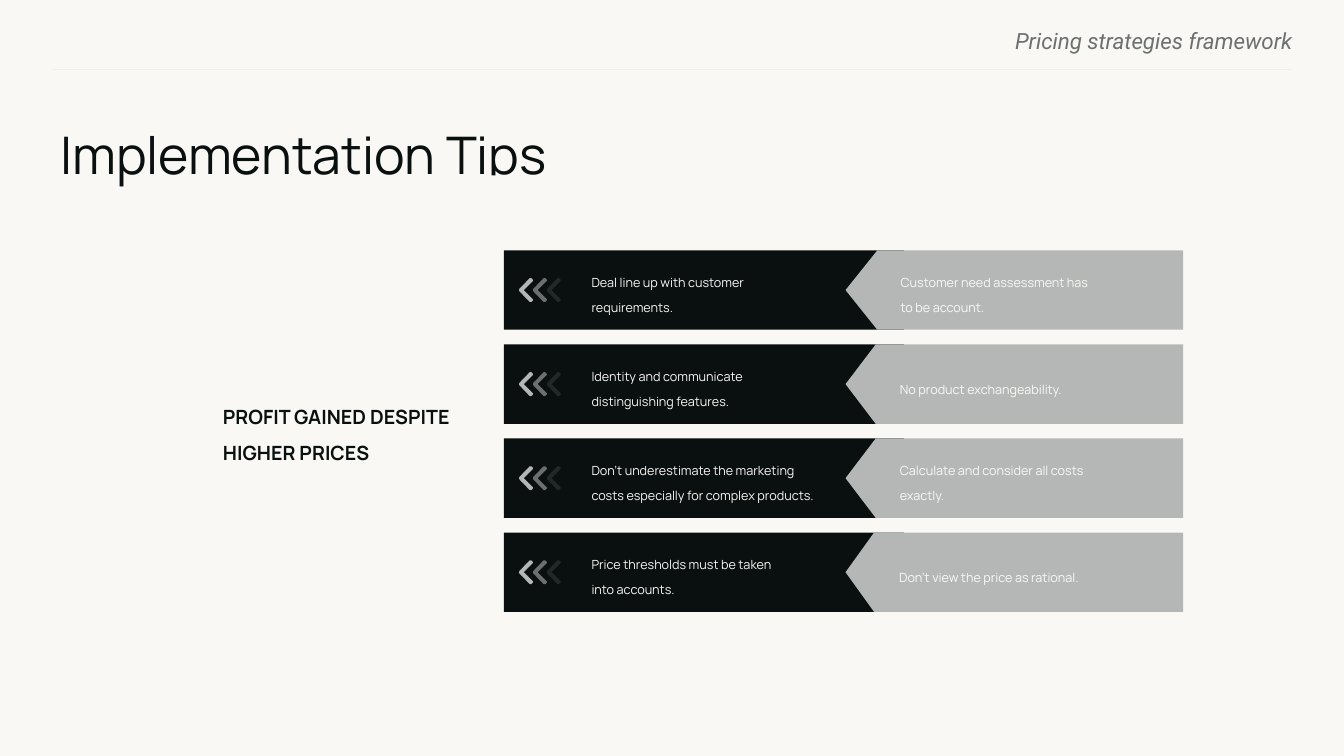
from lxml import etree
from pptx import Presentation
from pptx.dml.color import RGBColor
from pptx.enum.shapes import MSO_CONNECTOR, MSO_SHAPE
from pptx.enum.text import MSO_ANCHOR, PP_ALIGN
from pptx.oxml.ns import qn
from pptx.util import Cm, Pt

STRAIGHT = MSO_CONNECTOR.STRAIGHT
RECTANGLE, PENTAGON = MSO_SHAPE.RECTANGLE, MSO_SHAPE.PENTAGON
TOP, MIDDLE = MSO_ANCHOR.TOP, MSO_ANCHOR.MIDDLE
LEFT, RIGHT = PP_ALIGN.LEFT, PP_ALIGN.RIGHT

PAPER, INK, SILVER = "F9F8F5", "09100F", "B5B7B7"
WHITE, GREY, RULE = "FFFFFF", "6C706F", "EFEFEF"


def paint(shape, color):
    """Give a shape a plain fill with no outline and no shadow."""
    shape.shadow.inherit = False
    shape.fill.solid()
    shape.fill.fore_color.rgb = RGBColor.from_string(color)
    shape.line.fill.background()


def write(shape, paragraphs, color, font, paragraph=None, insets=(0, 0), anchor=MIDDLE):
    """Fill a shape with paragraphs; font and paragraph hold format values."""
    frame = shape.text_frame
    frame.word_wrap = True
    frame.vertical_anchor = anchor
    frame.margin_left, frame.margin_right = (Cm(inset) for inset in insets)
    frame.margin_top = frame.margin_bottom = 0
    frame.text = "\n".join(paragraphs)
    for para in frame.paragraphs:
        for name, value in {"alignment": LEFT, **(paragraph or {})}.items():
            setattr(para, name, value)
        for span in para.runs:
            span.font.color.rgb = RGBColor.from_string(color)
            for name, value in font.items():
                setattr(span.font, name, value)


deck = Presentation()
deck.slide_width, deck.slide_height = Cm(33.87), Cm(19.05)
page = deck.slides.add_slide(deck.slide_layouts[6])
page.background.fill.solid()
page.background.fill.fore_color.rgb = RGBColor.from_string(PAPER)

# Header and title
header = page.shapes.add_textbox(Cm(19.51), Cm(0.69), Cm(13.06), Cm(0.61))
write(header, ["Pricing strategies framework"], GREY,
      {"name": "Roboto", "size": Pt(16), "italic": True}, {"alignment": RIGHT}, anchor=TOP)

rule = page.shapes.add_connector(STRAIGHT, Cm(32.56), Cm(1.75), Cm(1.32), Cm(1.75))
rule.line.color.rgb = RGBColor.from_string(RULE)
rule.line.width = Pt(0.75)
etree.SubElement(rule._element.spPr, qn("a:effectLst"))

title = page.shapes.add_textbox(Cm(1.52), Cm(3.1), Cm(31.24), Cm(1.73))
write(title, ["Implementation Tips"], INK, {"name": "Manrope", "size": Pt(37)}, anchor=TOP)

# Outcome panel
panel = page.shapes.add_shape(RECTANGLE, Cm(4.22), Cm(4.42), Cm(16.92), Cm(12.95))
paint(panel, PAPER)
write(panel, ["PROFIT GAINED DESPITE", "HIGHER PRICES"], INK,
      {"name": "Manrope", "size": Pt(14), "bold": True}, {"line_spacing": 1.2}, (1.4, 0))
panel.text_frame.paragraphs[1].space_before = Pt(6)

# Tip rows: left text, right text, depth of the right arrow's point
tips = [
    (["Deal line up with customer\vrequirements."],
     ["Customer need assessment has\vto be account."], 0.4),
    (["Identity and communicate", "distinguishing features."],
     ["No product exchangeability."], 0.38),
    (["Don’t underestimate the marketing\vcosts especially for complex products."],
     ["Calculate and consider all costs\vexactly."], 0.38),
    (["Price thresholds must be taken\vinto accounts."],
     ["Don’t view the price as rational."], 0.36),
]
ROW_TOP, ROW_PITCH, ROW_HEIGHT = 6.31, 2.37, 2
CHEVRON_LEFT, CHEVRON_PITCH = 13.08, 0.35
CHEVRON_OPACITIES = (70, 40, 10)

# Lower half of a chevron, measured from its tip; the upper half mirrors it
lower = [(0.01, 0.03), (0.27, 0.3), (0.31, 0.3), (0.35, 0.26), (0.35, 0.23)]
upper = [(x, -y) for x, y in reversed(lower)]
chevron_outline = [(0, 0), *lower, (0.12, 0), *upper]

for row, (action, reason, depth) in enumerate(tips):
    top = ROW_TOP + row * ROW_PITCH
    bars = [
        (12.7, 10.08, INK, action, 0, (2.21, 0.99)),
        (21.31, 8.51, SILVER, reason, depth, (0.99, 0)),
    ]
    for left, width, color, text, point, insets in bars:
        bar = page.shapes.add_shape(PENTAGON, Cm(left), Cm(top), Cm(width), Cm(ROW_HEIGHT))
        bar.adjustments[0] = point
        bar._element.spPr.find(qn("a:xfrm")).set("flipH", "1")
        paint(bar, color)
        write(bar, text, PAPER, {"name": "Manrope", "size": Pt(9)},
              {"line_spacing": 1.67}, insets)

    chevrons = page.shapes.add_group_shape()
    middle = top + ROW_HEIGHT / 2
    for column, opacity in enumerate(CHEVRON_OPACITIES):
        tip = CHEVRON_LEFT + column * CHEVRON_PITCH
        points = [(Cm(tip + x), Cm(middle + y)) for x, y in chevron_outline]
        builder = chevrons.shapes.build_freeform(*points[0])
        builder.add_line_segments(points[1:], close=True)
        chevron = builder.convert_to_shape()
        paint(chevron, WHITE)
        tint = chevron._element.spPr.find(qn("a:solidFill"))[0]
        etree.SubElement(tint, qn("a:alpha"), val=str(opacity * 1000))

deck.save("out.pptx")
